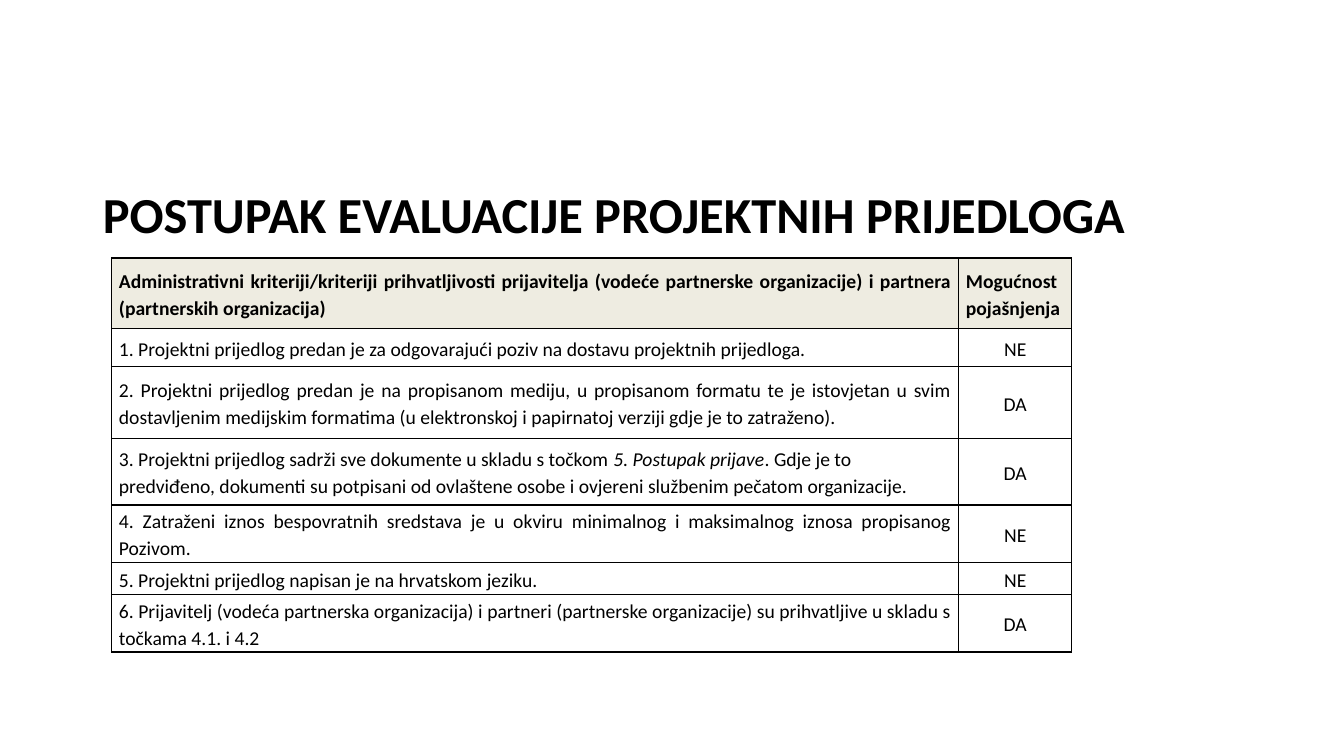
from dataclasses import dataclass

import pptx
import pptx.dml.color
import pptx.enum.text
import pptx.oxml
import pptx.oxml.ns
import pptx.util
from pptx.util import Inches

ALIGN = pptx.enum.text.PP_ALIGN
MIDDLE = pptx.enum.text.MSO_ANCHOR.MIDDLE


@dataclass(frozen=True)
class Theme:
    """Colours, font and type sizes of the deck."""
    ink: str = "000000"
    header: str = "EEECE1"
    font: str = "Calibri"
    title_size: int = 36
    table_size: int = 14


THEME = Theme()
TITLE = "POSTUPAK EVALUACIJE PROJEKTNIH PRIJEDLOGA"
HEADINGS = (
    "Administrativni kriteriji/kriteriji prihvatljivosti prijavitelja "
    "(vodeće partnerske organizacije) i partnera (partnerskih organizacija)",
    "Mogućnost pojašnjenja",
)
DOCUMENTS_ROW = 3
CRITERIA = [
    (["1. Projektni prijedlog predan je za odgovarajući poziv na dostavu "
      "projektnih prijedloga."], "NE"),
    (["2. Projektni prijedlog predan je na propisanom mediju, u propisanom "
      "formatu te je istovjetan u svim dostavljenim medijskim formatima "
      "(u elektronskoj i papirnatoj verziji gdje je to zatraženo)."], "DA"),
    (["3. Projektni prijedlog sadrži sve dokumente u skladu s točkom ",
      "5. Postupak prijave",
      ". Gdje je to predviđeno, dokumenti su potpisani od ovlaštene osobe "
      "i ovjereni službenim pečatom organizacije."], "DA"),
    (["4. Zatraženi iznos bespovratnih sredstava je u okviru minimalnog i "
      "maksimalnog iznosa propisanog Pozivom."], "NE"),
    (["5. Projektni prijedlog napisan je na hrvatskom jeziku."], "NE"),
    (["6. Prijavitelj (vodeća partnerska organizacija) i partneri (partnerske "
      "organizacije) su prihvatljive u skladu s točkama 4.1. i 4.2"], "DA"),
]
COLUMN_WIDTHS = (8.4, 1.12)
ROW_HEIGHTS = (0.7, 0.38, 0.71, 0.66, 0.57, 0.32, 0.57)


def style_font(font, size, bold):
    """Apply the theme's typeface and ink colour."""
    font.name = THEME.font
    font.size = pptx.util.Pt(size)
    font.bold = bold
    font.color.rgb = pptx.dml.color.RGBColor.from_string(THEME.ink)


def add_borders(cell):
    """Draw a one-point line on all four sides of a cell."""
    properties = cell._tc.get_or_add_tcPr()
    for index, side in enumerate("LRTB"):
        properties.insert(index, pptx.oxml.parse_xml(
            f'<a:ln{side} {pptx.oxml.ns.nsdecls("a")} w="12700"><a:solidFill>'
            f'<a:srgbClr val="{THEME.ink}"/></a:solidFill></a:ln{side}>'))


def fill_cell(cell, spans, align, header=False):
    """Write spans into a cell; every second span is italic."""
    cell.vertical_anchor = MIDDLE
    cell.margin_left = cell.margin_right = Inches(0.07)
    cell.margin_top = cell.margin_bottom = 0
    if header:
        cell.fill.solid()
        cell.fill.fore_color.rgb = pptx.dml.color.RGBColor.from_string(THEME.header)
    else:
        cell.fill.background()
    add_borders(cell)
    para = cell.text_frame.paragraphs[0]
    para.alignment = align
    para.line_spacing = 1.15
    style_font(para.font, THEME.table_size, header)
    for index, text in enumerate(spans):
        span = para.add_run()
        span.text = text
        if index % 2:
            span.font.italic = True


def place_title(page, left, top, width, height):
    """Set the title low in its box, just above the table."""
    box = page.shapes.title
    box.left, box.top, box.width, box.height = left, top, width, height
    frame = box.text_frame
    frame.word_wrap = True
    frame.auto_size = pptx.enum.text.MSO_AUTO_SIZE.NONE
    frame.vertical_anchor = pptx.enum.text.MSO_ANCHOR.BOTTOM
    frame.margin_bottom = Inches(0.17)
    frame.text = TITLE
    para = frame.paragraphs[0]
    para.alignment = ALIGN.LEFT
    para.line_spacing = 0.9
    style_font(para.font, THEME.title_size, True)


def place_criteria(page, left, top, width, height):
    """Build the table of criteria."""
    table = page.shapes.add_table(
        len(ROW_HEIGHTS), len(COLUMN_WIDTHS), left, top, width, height).table
    table.first_row = table.horz_banding = False
    for column, size in zip(table.columns, COLUMN_WIDTHS):
        column.width = Inches(size)
    for row, size in zip(table.rows, ROW_HEIGHTS):
        row.height = Inches(size)
    for column, heading in enumerate(HEADINGS):
        fill_cell(table.cell(0, column), [heading], ALIGN.JUSTIFY, header=True)
    for row, (spans, answer) in enumerate(CRITERIA, start=1):
        align = ALIGN.LEFT if row == DOCUMENTS_ROW else ALIGN.JUSTIFY
        fill_cell(table.cell(row, 0), spans, align)
        fill_cell(table.cell(row, 1), [answer], ALIGN.CENTER)


def main():
    """Build and save the deck."""
    deck = pptx.Presentation()
    deck.slide_width, deck.slide_height = Inches(13.33), Inches(7.5)
    page = deck.slides.add_slide(deck.slide_layouts.get_by_name("Title Only"))
    place_title(page, Inches(0.92), Inches(1.15), Inches(11.5), Inches(1.45))
    place_criteria(page, Inches(1.11), Inches(2.56),
                   Inches(sum(COLUMN_WIDTHS)), Inches(sum(ROW_HEIGHTS)))
    deck.save("out.pptx")


if __name__ == "__main__":
    main()
